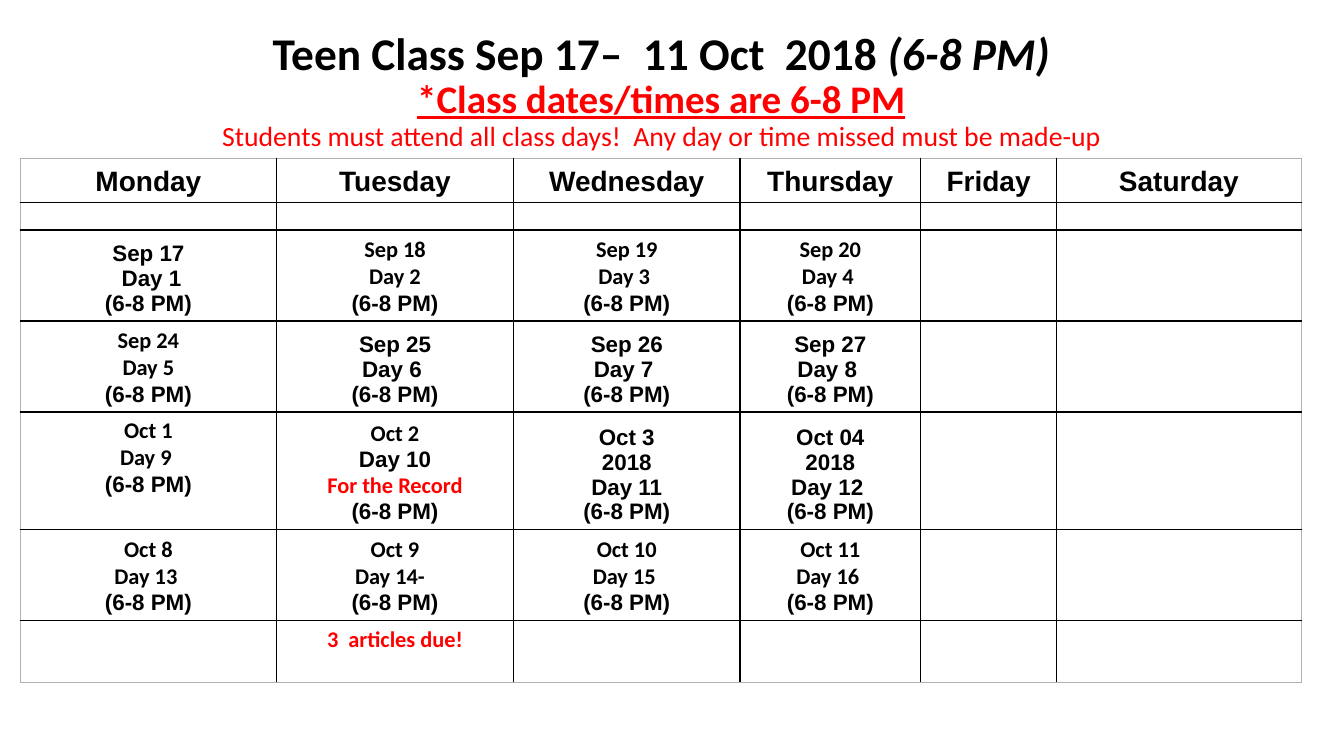
"""Build the evening class calendar slide."""
import dataclasses

import lxml.etree
import pptx
import pptx.dml.color
import pptx.enum.text
import pptx.oxml.ns
import pptx.util

Cm = pptx.util.Cm
Pt = pptx.util.Pt
qn = pptx.oxml.ns.qn
ANCHOR = pptx.enum.text.MSO_ANCHOR
CENTER = pptx.enum.text.PP_ALIGN.CENTER


@dataclasses.dataclass(frozen=True)
class Theme:
    """Hold the colours, fonts and type sizes."""
    black: str = "000000"
    red: str = "FF0000"
    white: str = "FFFFFF"
    grey: str = "B2B2B2"
    sans: str = "Arial"
    soft: str = "Calibri"
    title: float = 32.4
    alert: float = 27.9
    note: float = 19.8
    head: float = 20
    body: float = 16
    blank: float = 10
    rule: float = 1


THEME = Theme()
HOURS = "(6-8 PM)"
WIDTHS = [6.46, 5.97, 5.71, 4.55, 3.43, 6.16]
HEIGHTS = [1.03, 0.7, 2.27, 2.27, 2.95, 2.27, 1.55]
HEADS = ["Monday", "Tuesday", "Wednesday", "Thursday", "Friday", "Saturday"]
SOFT, ALERT = "~", "!"
WEEKS = [
    [["Sep 17", " Day 1"], ["~Sep 18", "~Day 2"],
     ["~Sep 19", "~Day 3 "], ["~Sep 20", "~Day 4 "]],
    [["~Sep 24", "~ Day 5 "], ["Sep 25", "Day 6 "],
     ["Sep 26", "Day 7 "], ["Sep 27", "Day 8 "]],
    [["~Oct 1", "~Day 9 "], ["~Oct 2", "Day 10", "!For the Record"],
     ["Oct 3", "2018", "Day 11"], ["Oct 04", "2018", "Day 12 "]],
    [["~Oct 8", "~Day 13 "], ["~Oct 9", "~Day 14-  "],
     ["~Oct 10", "~Day 15 "], ["~Oct 11", "~Day 16 "]],
]
DUE = "!3  articles due!"


def style(run, size, face, color, bold=True):
    """Set the look of one run."""
    font = run.font
    font.size, font.name, font.bold = Pt(size), face, bold
    font.color.rgb = pptx.dml.color.RGBColor.from_string(color)


def add_title(slide):
    """Add the three centred title lines."""
    box = slide.shapes.add_textbox(Cm(3.28), Cm(0.69), Cm(26.77), Cm(3.23))
    frame = box.text_frame
    frame.word_wrap = True
    frame.vertical_anchor = ANCHOR.MIDDLE
    frame.text = "\n".join([
        "Teen Class Sep 17–  11 Oct  2018 ",
        "*Class dates/times are 6-8 PM",
        "Students must attend all class days!  "
        "Any day or time missed must be made-up",
    ])
    first, second, third = frame.paragraphs
    first.add_run().text = HOURS
    looks = [(first, THEME.title, THEME.black, True),
             (second, THEME.alert, THEME.red, True),
             (third, THEME.note, THEME.red, False)]
    for para, size, color, bold in looks:
        para.alignment, para.line_spacing = CENTER, 0.9
        for run in para.runs:
            style(run, size, THEME.soft, color, bold)
    first.runs[1].font.italic = True
    second.runs[0].font.underline = True


def add_edge(cell, side, color):
    """Draw one border of a cell."""
    line = lxml.etree.SubElement(cell._tc.get_or_add_tcPr(), qn("a:ln" + side),
                                 w=str(Pt(THEME.rule)))
    fill = lxml.etree.SubElement(line, qn("a:solidFill"))
    lxml.etree.SubElement(fill, qn("a:srgbClr"), val=color)


def frame_cell(cell, row, col):
    """Give a cell its borders, white fill and margins."""
    outer = {"L": col == 0, "R": col == len(WIDTHS) - 1,
             "T": row == 0, "B": row == len(HEIGHTS) - 1}
    for side, edge in outer.items():
        add_edge(cell, side, THEME.grey if edge else THEME.black)
    cell.fill.solid()
    cell.fill.fore_color.rgb = pptx.dml.color.RGBColor.from_string(THEME.white)
    cell.margin_left = cell.margin_right = Cm(0.33)
    cell.margin_top = cell.margin_bottom = Cm(0.13)
    cell.vertical_anchor = ANCHOR.BOTTOM


def fill_cell(cell, lines, size):
    """Write marked lines into a cell, or keep it small when empty."""
    frame = cell.text_frame
    frame.text = "\n".join(line.lstrip(SOFT + ALERT) for line in lines)
    for para, line in zip(frame.paragraphs, lines):
        para.alignment = CENTER
        red = line.startswith(ALERT)
        soft = red or line.startswith(SOFT)
        style(para.runs[0], size, THEME.soft if soft else THEME.sans,
              THEME.red if red else THEME.black)
    if not lines:
        lxml.etree.SubElement(frame.paragraphs[0]._p, qn("a:endParaRPr"),
                              sz=str(THEME.blank * 100))


def add_dates(slide):
    """Add the calendar table."""
    grid = slide.shapes.add_table(
        len(HEIGHTS), len(WIDTHS), Cm(0.51), Cm(3.99),
        Cm(sum(WIDTHS)), Cm(sum(HEIGHTS))).table
    grid.first_row = grid.horz_banding = False
    for col, width in zip(grid.columns, WIDTHS):
        col.width = Cm(width)
    for row, height in zip(grid.rows, HEIGHTS):
        row.height = Cm(height)
    text = {(0, col): [head] for col, head in enumerate(HEADS)}
    for row, week in enumerate(WEEKS, 2):
        for col, lines in enumerate(week):
            text[row, col] = lines + [HOURS]
    last = len(HEIGHTS) - 1
    text[last, 1] = [DUE]
    for row in range(len(HEIGHTS)):
        for col in range(len(WIDTHS)):
            cell = grid.cell(row, col)
            frame_cell(cell, row, col)
            fill_cell(cell, text.get((row, col), []),
                      THEME.body if row else THEME.head)
    for spot in [(4, 0), (last, 1)]:
        grid.cell(*spot).vertical_anchor = ANCHOR.TOP


def main():
    """Build and save the slide."""
    deck = pptx.Presentation()
    deck.slide_width, deck.slide_height = Cm(33.87), Cm(19.05)
    slide = deck.slides.add_slide(deck.slide_layouts[6])
    add_title(slide)
    add_dates(slide)
    deck.save("out.pptx")


if __name__ == "__main__":
    main()
